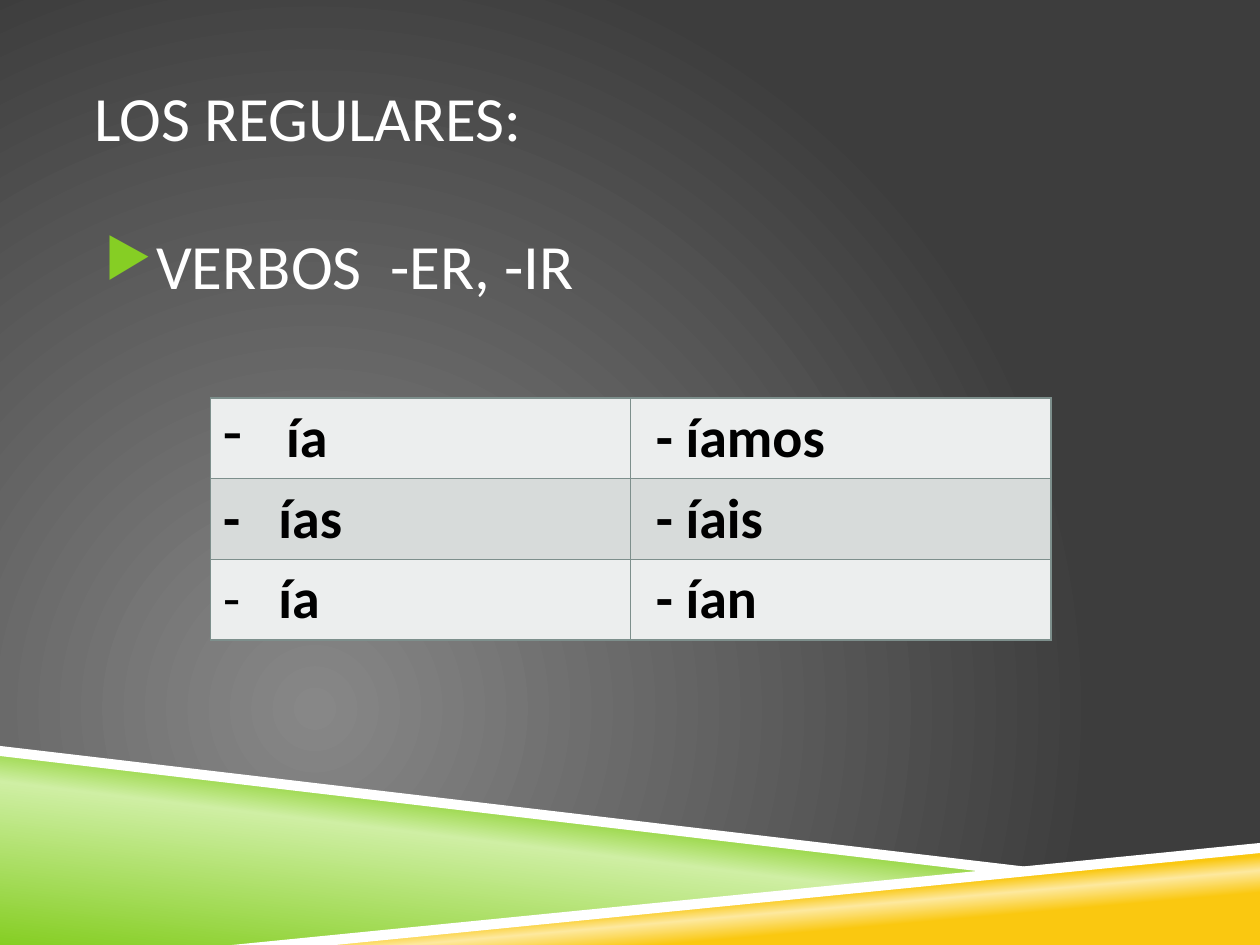
from dataclasses import dataclass

from lxml import etree
from pptx import Presentation
from pptx.dml.color import RGBColor
from pptx.enum.text import MSO_ANCHOR
from pptx.oxml.ns import qn
from pptx.util import Inches, Pt

MIDDLE = MSO_ANCHOR.MIDDLE
TOP = MSO_ANCHOR.TOP


@dataclass(frozen=True)
class Theme:
    font: str = "Calibri"
    head: int = 36
    cell: int = 32
    white: str = "FFFFFF"
    black: str = "000000"
    green: str = "86CE24"
    lime: str = "CFEFA4"
    gold: str = "FAC810"
    cream: str = "FDE99F"
    glow: str = "878787"
    dark: str = "3D3D3D"
    rule: str = "7D8F8C"
    bands: tuple = ("ECEEEE", "D7DBDA")


THEME = Theme()


def add_tag(parent, tag, **attrs):
    node = etree.SubElement(parent, qn(tag))
    for key, value in attrs.items():
        node.set(key, str(value))
    return node


def set_stops(root, stops):
    grad = root.find(".//" + qn("a:gradFill"))
    for child in list(grad):
        grad.remove(child)
    group = add_tag(grad, "a:gsLst")
    for place, color in stops:
        stop = add_tag(group, "a:gs", pos=place * 1000)
        add_tag(stop, "a:srgbClr", val=color)
    return grad


def paint_back(slide):
    slide.background.fill.gradient()
    grad = set_stops(slide.element, [(0, THEME.glow), (100, THEME.dark)])
    path = add_tag(grad, "a:path", path="circle")
    add_tag(path, "a:fillToRect", l=50000, t=100000, r=100000, b=50000)


def add_shape(slide, box, points):
    left, top = box[:2]
    spots = [(left + Inches(x), top + Inches(y)) for x, y in points]
    pen = slide.shapes.build_freeform(*spots[0])
    pen.add_line_segments(spots[1:], close=True)
    shape = pen.convert_to_shape()
    shape.shadow.inherit = False
    shape.line.fill.background()
    return shape


def add_wedge(slide, box, points, stops, angle):
    shape = add_shape(slide, box, points)
    shape.fill.gradient()
    grad = set_stops(shape.element, stops)
    add_tag(grad, "a:lin", ang=angle * 60000, scaled=0)


def add_stripe(slide, box, points):
    shape = add_shape(slide, box, points)
    shape.fill.solid()
    shape.fill.fore_color.rgb = RGBColor.from_string(THEME.white)


def add_foot(slide, box):
    add_wedge(slide, box, [(0, 0.05), (7.92, 1), (2, 1.58), (0, 1.58)],
              [(0, THEME.green), (52, THEME.lime), (66, THEME.green)], 277)
    add_wedge(slide, box, [(1.98, 1.58), (10, 0.8), (10, 1.58)],
              [(28, THEME.gold), (40, THEME.cream), (48, THEME.gold)], 265)
    add_stripe(slide, box, [(0, 0), (0, 0.08), (7.9, 1.01), (8.32, 0.98)])
    add_stripe(slide, box, [(10, 0.77), (1.84, 1.58), (2.66, 1.58), (10, 0.85)])


def add_run(para, text, size, color, bold=False):
    run = para.add_run()
    run.text = text
    font = run.font
    font.name, font.size, font.bold = THEME.font, Pt(size), bold
    font.color.rgb = RGBColor.from_string(color)


def hang(para, margin, indent):
    props = para._p.get_or_add_pPr()
    props.set("marL", str(Inches(margin)))
    props.set("indent", str(-Inches(indent)))
    return props


def add_text(slide, box, text, anchor):
    frame = slide.shapes.add_textbox(*box).text_frame
    frame.word_wrap = True
    frame.vertical_anchor = anchor
    frame.margin_left = frame.margin_right = 0
    para = frame.paragraphs[0]
    add_run(para, text, THEME.head, THEME.white)
    return para


def add_title(slide, box):
    add_text(slide, box, "LOS REGULARES:", MIDDLE)


def add_body(slide, box):
    para = add_text(slide, box, "VERBOS  -ER, -IR", TOP)
    props = hang(para, 0.49, 0.41)
    tint = add_tag(props, "a:buClr")
    add_tag(tint, "a:srgbClr", val=THEME.green)
    add_tag(props, "a:buSzPct", val=85000)
    add_tag(props, "a:buChar", char="▶")


def add_edges(cell):
    props = cell._tc.get_or_add_tcPr()
    for place, side in enumerate(("a:lnL", "a:lnR", "a:lnT", "a:lnB")):
        line = add_tag(props, side, w=Pt(1))
        fill = add_tag(line, "a:solidFill")
        add_tag(fill, "a:srgbClr", val=THEME.rule)
        props.insert(place, line)


def add_grid(slide, box):
    rows = [
        ([("ía", True)], "- íamos"),
        ([("-\tías", True)], "- íais"),
        ([("-\t", False), ("ía", True)], "- ían"),
    ]
    table = slide.shapes.add_table(len(rows), 2, *box).table
    table.first_row = table.horz_banding = False
    for index, (single, plural) in enumerate(rows):
        for col, runs in enumerate((single, [(plural, True)])):
            cell = table.cell(index, col)
            cell.fill.solid()
            shade = THEME.bands[index % 2]
            cell.fill.fore_color.rgb = RGBColor.from_string(shade)
            add_edges(cell)
            para = cell.text_frame.paragraphs[0]
            if col:
                cell.margin_left = Inches(0.2)
            elif index:
                hang(para, 0.44, 0.44)
            else:
                add_tag(hang(para, 0.5, 0.5), "a:buChar", char="-")
            for text, bold in runs:
                add_run(para, text, THEME.cell, THEME.black, bold)


def get_box(*sides):
    return tuple(Inches(side) for side in sides)


def main():
    deck = Presentation()
    deck.slide_width, deck.slide_height = Inches(10), Inches(7.5)
    slide = deck.slides.add_slide(deck.slide_layouts[6])
    paint_back(slide)
    add_foot(slide, get_box(0, 5.92, 10, 1.58))
    add_title(slide, get_box(0.75, 0.3, 8.5, 1.25))
    add_body(slide, get_box(0.75, 1.75, 8.5, 4.08))
    add_grid(slide, get_box(1.67, 3.16, 6.67, 1.92))
    deck.save("out.pptx")


if __name__ == "__main__":
    main()
